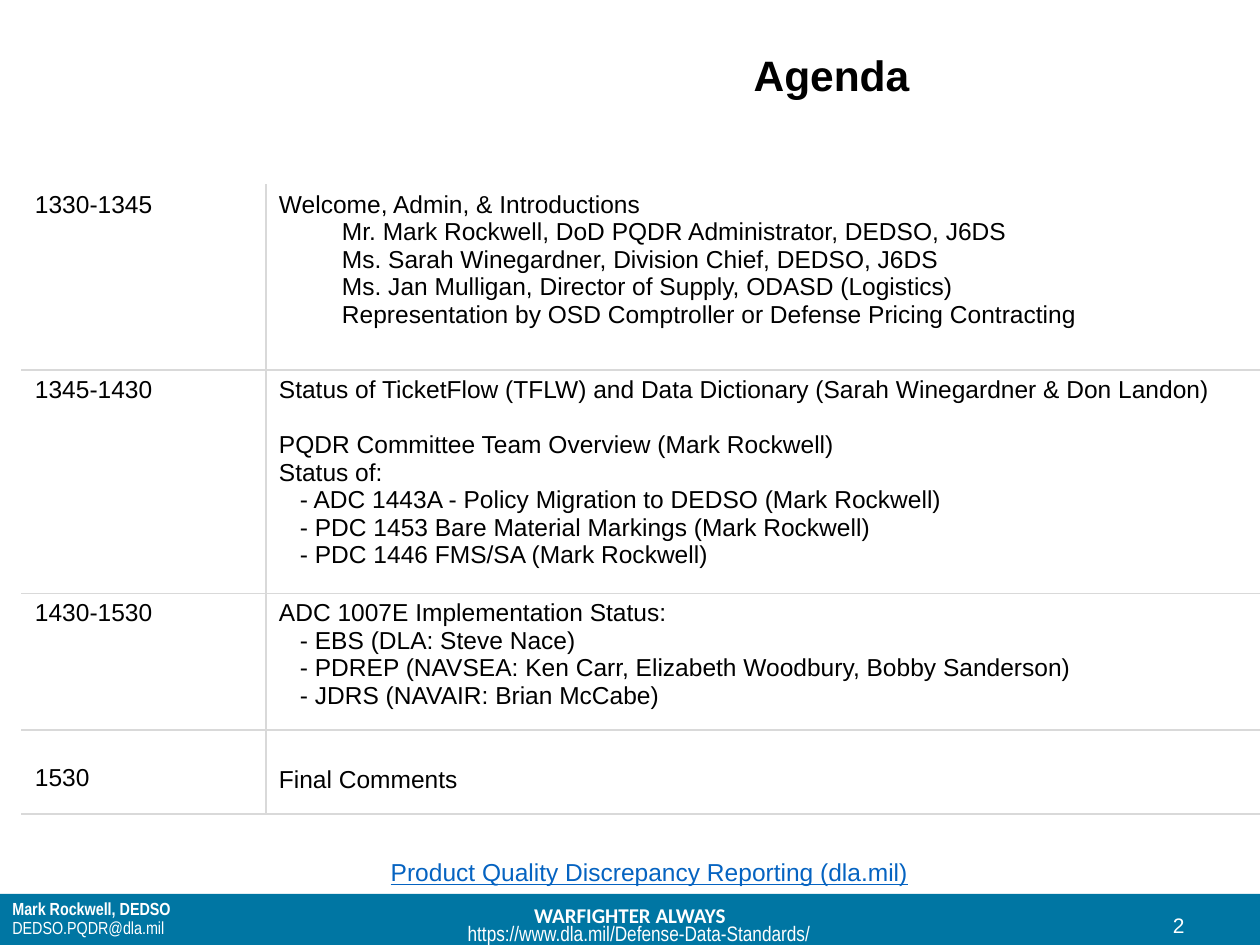
"""Builds the agenda slide with its timetable and footer bar."""
from dataclasses import dataclass

from lxml.etree import SubElement
from pptx import Presentation
from pptx.dml.color import RGBColor
from pptx.enum.shapes import MSO_SHAPE
from pptx.enum.text import MSO_ANCHOR, PP_ALIGN
from pptx.oxml.ns import qn
from pptx.util import Pt


@dataclass(frozen=True)
class Theme:
    black: str = "000000"
    white: str = "FFFFFF"
    bar: str = "0076A3"
    link: str = "0563C1"
    rule: str = "D9D9D9"
    title: float = 24.3
    body: int = 14
    footer: int = 12
    contact: int = 10


T = Theme()
BODY = dict(name="Arial", size=T.body, color=T.black)
FOOTER = dict(name="Arial", size=T.footer, color=T.white)
CONTACT = dict(name="Arial Narrow", size=T.contact, color=T.white)

NAME, ITEM, GAP = dict(indent=63), dict(indent=21), dict(space_before=Pt(16))
AGENDA = [
    (185, "1330-1345", [
        ("Welcome, Admin, & Introductions", {}),
        ("Mr. Mark Rockwell, DoD PQDR Administrator, DEDSO, J6DS", NAME),
        ("Ms. Sarah Winegardner, Division Chief, DEDSO, J6DS", NAME),
        ("Ms. Jan Mulligan, Director of Supply, ODASD (Logistics)", NAME),
        ("Representation by OSD Comptroller or Defense Pricing Contracting", NAME),
    ]),
    (211, "1345-1430", [
        ("Status of TicketFlow (TFLW) and Data Dictionary "
         "(Sarah Winegardner & Don Landon)", {}),
        ("PQDR Committee Team Overview (Mark Rockwell)", GAP),
        ("Status of:", {}),
        ("- ADC 1443A - Policy Migration to DEDSO (Mark Rockwell)", ITEM),
        ("- PDC 1453 Bare Material Markings (Mark Rockwell)", ITEM),
        ("- PDC 1446 FMS/SA (Mark Rockwell)", ITEM),
    ]),
    (130, "1430-1530", [
        ("ADC 1007E Implementation Status:", {}),
        ("- EBS (DLA: Steve Nace)", ITEM),
        ("- PDREP (NAVSEA: Ken Carr, Elizabeth Woodbury, Bobby Sanderson)", ITEM),
        ("- JDRS (NAVAIR: Brian McCabe)", ITEM),
    ]),
    (84, "1530", [("Final Comments", {})]),
]


def px(n):
    """Turn pixels into EMU."""
    return round(n * 914400 / 126)


class Deck:
    """Holds the presentation and the current slide."""

    def __init__(self, width, height):
        self.prs = Presentation()
        self.prs.slide_width, self.prs.slide_height = px(width), px(height)
        self.s = self.prs.slides.add_slide(self.prs.slide_layouts[6])

    def paragraphs(self, tf, lines):
        """Set (text, font, layout) lines as paragraphs."""
        for i, (text, font, layout) in enumerate(lines):
            p = tf.paragraphs[0] if i == 0 else tf.add_paragraph()
            r = p.add_run()
            r.text = text
            for key, value in font.items():
                if key == "color":
                    r.font.color.rgb = RGBColor.from_string(value)
                else:
                    setattr(r.font, key, Pt(value) if key == "size" else value)
            for key, value in layout.items():
                if key == "indent":
                    pPr = p._p.get_or_add_pPr()
                    pPr.set("marL", str(px(value)))
                    pPr.set("indent", "0")
                else:
                    setattr(p, key, value)

    def bar(self, x, y, w, h, color):
        """Add a filled bar."""
        sp = self.s.shapes.add_shape(MSO_SHAPE.RECTANGLE, *map(px, (x, y, w, h)))
        sp.shadow.inherit = False
        sp.fill.solid()
        sp.fill.fore_color.rgb = RGBColor.from_string(color)
        sp.line.fill.background()

    def text(self, x, y, w, h, lines, **frame):
        """Add a wrapped text box."""
        sp = self.s.shapes.add_textbox(*map(px, (x, y, w, h)))
        tf = sp.text_frame
        for key, value in {"word_wrap": True, **frame}.items():
            setattr(tf, key, value)
        self.paragraphs(tf, lines)

    def borders(self, cell, sides):
        """Rule the named sides of a cell."""
        tcPr = cell._tc.get_or_add_tcPr()
        for side in sides:
            ln = SubElement(tcPr, qn(f"a:ln{side}"), w=str(Pt(1)))
            fill = SubElement(ln, qn("a:solidFill"))
            SubElement(fill, qn("a:srgbClr"), val=T.rule)

    def table(self, x, y, cols, rows):
        """Add the timetable, with a lowered last row."""
        heights = [row[0] for row in rows]
        box = map(px, (x, y, sum(cols), sum(heights)))
        tbl = self.s.shapes.add_table(len(rows), len(cols), *box).table
        tbl.first_row = tbl.horz_banding = False
        for col, w in zip(tbl.columns, cols):
            col.width = px(w)
        for i, (h, time, topics) in enumerate(rows):
            tbl.rows[i].height = px(h)
            last = i == len(rows) - 1
            for j, lines in enumerate(([(time, {})], topics)):
                cell = tbl.cell(i, j)
                margins = dict(margin_left=13, margin_right=13, margin_bottom=13,
                               margin_top=34 + 2 * j if last else 6)
                for key, value in margins.items():
                    setattr(cell, key, px(value))
                self.borders(cell, ("L" if j else "R") + ("TB" if i else "B"))
                cell.fill.background()
                self.paragraphs(cell.text_frame,
                                [(text, BODY, layout) for text, layout in lines])


def main():
    deck = Deck(1260, 945)
    center = dict(alignment=PP_ALIGN.CENTER)
    tight = dict(line_spacing=0.9)
    middle = dict(vertical_anchor=MSO_ANCHOR.MIDDLE)
    deck.bar(0, 894, 1260, 51, T.bar)
    deck.text(0, 896, 1260, 38, [
        ("WARFIGHTER ALWAYS", {**FOOTER, "name": "Calibri", "bold": True}, center)])
    deck.text(422, 28, 819, 113, [
        ("Agenda", {**BODY, "size": T.title, "bold": True}, {**center, **tight})],
        margin_bottom=px(19), **middle)
    deck.text(914, 900, 283, 50, [
        ("2", FOOTER, dict(alignment=PP_ALIGN.RIGHT))], **middle)
    deck.text(0, 894, 378, 51, [
        ("Mark Rockwell, DEDSO", {**CONTACT, "bold": True}, tight),
        ("DEDSO.PQDR@dla.mil", CONTACT, tight)], **middle)
    deck.table(22, 185, (244, 997), AGENDA)
    deck.text(146, 851, 1007, 43, [
        ("Product Quality Discrepancy Reporting (dla.mil)",
         {**BODY, "color": T.link, "underline": True}, center)])
    deck.text(450, 914, 378, 38, [
        ("https://www.dla.mil/Defense-Data-Standards/",
         {**CONTACT, "size": T.footer}, center)])
    deck.prs.save("out.pptx")


if __name__ == "__main__":
    main()
